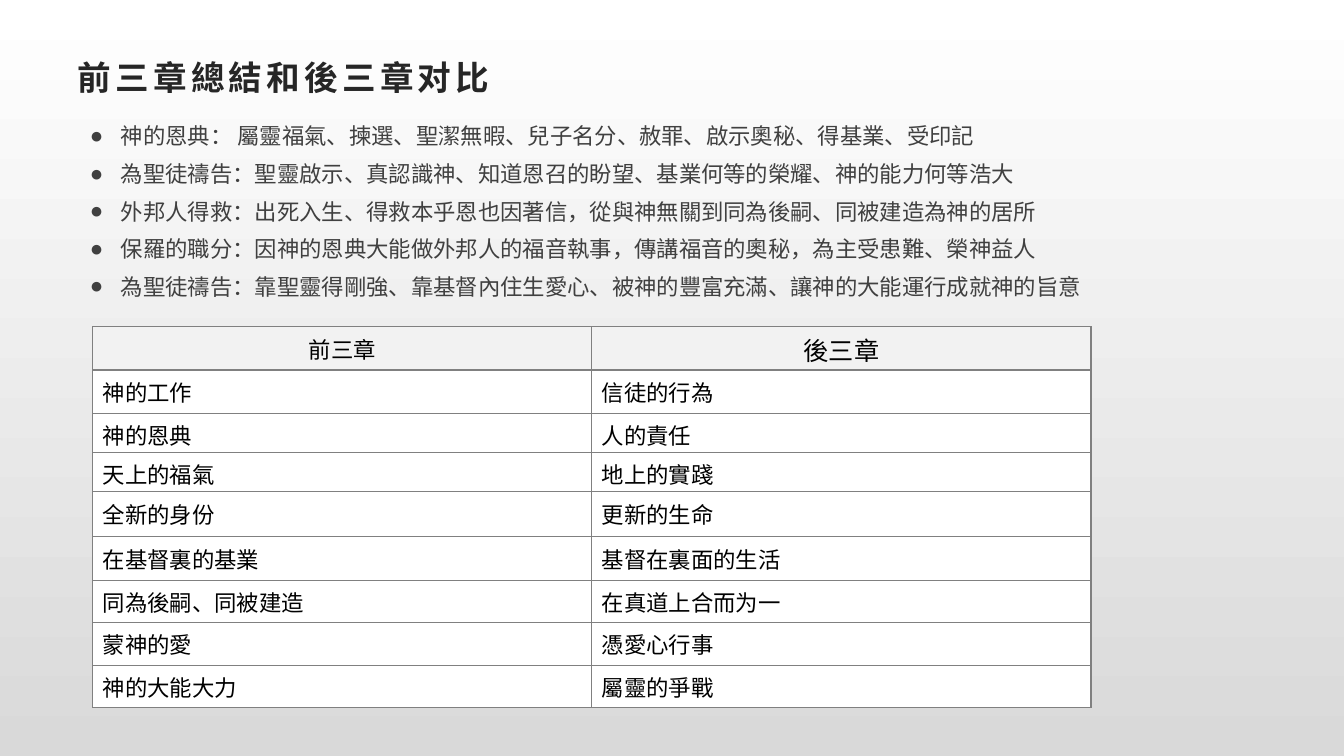
"""Build the slide comparing the first three chapters with the last three."""
import pptx
import pptx.dml.color
import pptx.enum.text
import pptx.oxml.ns
import pptx.util
from lxml import etree
from pptx.util import Inches

TITLE = "前三章總結和後三章对比"
POINTS = [
    "神的恩典： 屬靈福氣、揀選、聖潔無暇、兒子名分、赦罪、啟示奧秘、得基業、受印記",
    "為聖徒禱告：聖靈啟示、真認識神、知道恩召的盼望、基業何等的榮耀、神的能力何等浩大",
    "外邦人得救：出死入生、得救本乎恩也因著信，從與神無關到同為後嗣、同被建造為神的居所",
    "保羅的職分：因神的恩典大能做外邦人的福音執事，傳講福音的奧秘，為主受患難、榮神益人",
    "為聖徒禱告：靠聖靈得剛強、靠基督內住生愛心、被神的豐富充滿、讓神的大能運行成就神的旨意",
]
ROWS = [
    ("前三章", "後三章"),
    ("神的工作", "信徒的行為"),
    ("神的恩典", "人的責任"),
    ("天上的福氣", "地上的實踐"),
    ("全新的身份", "更新的生命"),
    ("在基督裏的基業", "基督在裏面的生活"),
    ("同為後嗣、同被建造", "在真道上合而为一"),
    ("蒙神的愛", "憑愛心行事"),
    ("神的大能大力", "屬靈的爭戰"),
]
ROW_HEIGHTS = [0.43, 0.43, 0.39, 0.39, 0.44, 0.44, 0.42, 0.42, 0.42]
COL_WIDTH = 4.95
HEADER_SIZES = (16, 18)
CJK = "Noto Sans CJK SC"
COLORS = {
    "title": "262626", "body": "404040", "cell_text": "000000", "border": "808080",
    "header": "F2F2F2", "cell": "FFFFFF", "top": "FFFFFF", "bottom": "D9D9D9",
}
ALIGN = pptx.enum.text.PP_ALIGN
ANCHOR = pptx.enum.text.MSO_ANCHOR
AUTO = pptx.enum.text.MSO_AUTO_SIZE


def rgb(name):
    """Return the named colour."""
    return pptx.dml.color.RGBColor.from_string(COLORS[name])


def sub(parent, tag, **attrs):
    """Append a drawing element to its parent."""
    return etree.SubElement(parent, pptx.oxml.ns.qn(tag), attrs)


def assign(obj, values):
    """Set attributes from a dict."""
    for key, value in values.items():
        setattr(obj, key, value)


def write(p, text, color, size, name, bold=False):
    """Add one formatted run to a paragraph."""
    r = p.add_run()
    r.text = text
    assign(r.font, {"size": pptx.util.Pt(size), "bold": bold, "name": name})
    r.font.color.rgb = rgb(color)
    sub(r.font._element, "a:ea", typeface=CJK)
    return r


def place(sp, left, top, width, height):
    """Move and size a shape, in inches."""
    assign(sp, {"left": Inches(left), "top": Inches(top),
                "width": Inches(width), "height": Inches(height)})


def add_borders(cell):
    """Draw a thin line on each side of a cell."""
    tc_pr = cell._tc.get_or_add_tcPr()
    for i, side in enumerate(("a:lnL", "a:lnR", "a:lnT", "a:lnB")):
        ln = sub(tc_pr, side, w=str(pptx.util.Pt(1)))
        sub(sub(ln, "a:solidFill"), "a:srgbClr", val=COLORS["border"])
        tc_pr.insert(i, ln)


def add_title(s):
    """Fill the title placeholder."""
    sp = s.shapes.title
    place(sp, 0.67, 0.38, 12, 0.77)
    tf = sp.text_frame
    assign(tf, {"vertical_anchor": ANCHOR.MIDDLE, "auto_size": AUTO.NONE})
    p = tf.paragraphs[0]
    p.alignment = ALIGN.LEFT
    r = write(p, TITLE, "title", 24, "Arial", True)
    r.font._element.set("spc", "300")


def add_points(s):
    """Fill the body placeholder with the bulleted summary."""
    sp = s.placeholders[1]
    place(sp, 0.79, 1.06, 11.66, 1.98)
    tf = sp.text_frame
    assign(tf, {"vertical_anchor": ANCHOR.TOP, "auto_size": AUTO.SHAPE_TO_FIT_TEXT,
                "word_wrap": True})
    for i, text in enumerate(POINTS):
        p = tf.add_paragraph() if i else tf.paragraphs[0]
        assign(p, {"line_spacing": 1.4, "space_before": 0, "space_after": 0,
                   "alignment": ALIGN.LEFT})
        p_pr = p._p.get_or_add_pPr()
        p_pr.set("marL", str(Inches(0.31)))
        p_pr.set("indent", str(Inches(-0.31)))
        sub(p_pr, "a:buFont", typeface="Arial")
        sub(p_pr, "a:buChar", char="●")
        write(p, text, "body", 16, CJK)


def add_comparison(s):
    """Add the two-column comparison table."""
    frame = s.shapes.add_table(len(ROWS), 2, Inches(0.92), Inches(3.24),
                               Inches(2 * COL_WIDTH), Inches(sum(ROW_HEIGHTS)))
    table = frame.table
    assign(table, {"first_row": False, "horz_banding": False})
    for col in table.columns:
        col.width = Inches(COL_WIDTH)
    for i, (texts, height) in enumerate(zip(ROWS, ROW_HEIGHTS)):
        table.rows[i].height = Inches(height)
        for j, text in enumerate(texts):
            cell = table.cell(i, j)
            cell.vertical_anchor = ANCHOR.MIDDLE
            cell.fill.solid()
            cell.fill.fore_color.rgb = rgb("cell" if i else "header")
            add_borders(cell)
            p = cell.text_frame.paragraphs[0]
            p.alignment = ALIGN.LEFT if i else ALIGN.CENTER
            write(p, text, "cell_text", 16 if i else HEADER_SIZES[j], CJK if i else "Arial")


def main():
    """Build and save the presentation."""
    prs = pptx.Presentation()
    assign(prs, {"slide_width": Inches(13.33), "slide_height": Inches(7.5)})
    s = prs.slides.add_slide(prs.slide_layouts[1])
    fill = s.background.fill
    fill.gradient()
    fill.gradient_angle = 270
    for stop, name in zip(fill.gradient_stops, ("top", "bottom")):
        stop.color.rgb = rgb(name)
    add_title(s)
    add_points(s)
    add_comparison(s)
    prs.save("out.pptx")


if __name__ == "__main__":
    main()
